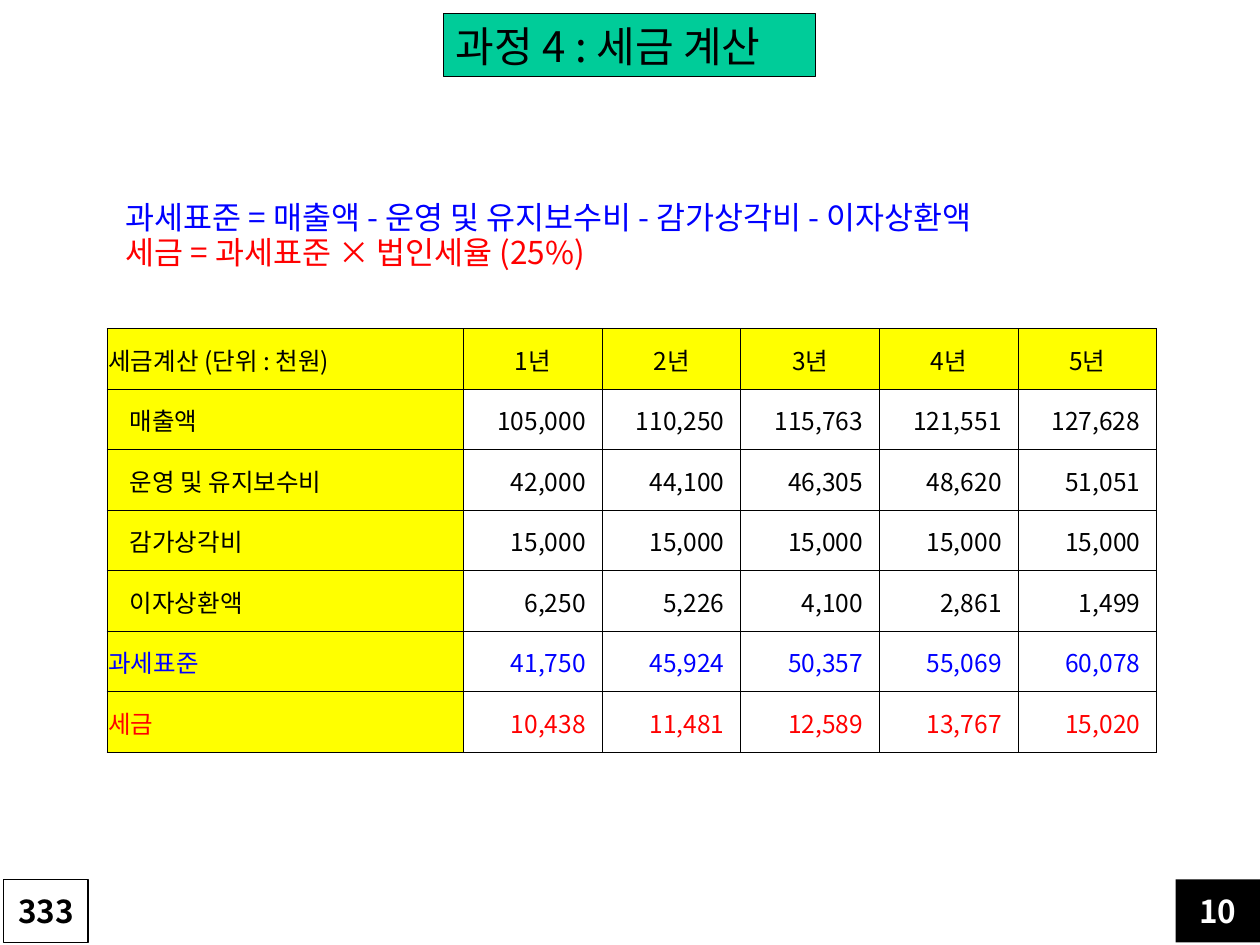
from lxml.etree import SubElement
from pptx import Presentation
from pptx.dml.color import RGBColor
from pptx.enum.shapes import MSO_SHAPE
from pptx.enum.text import MSO_ANCHOR, PP_ALIGN
from pptx.oxml.ns import qn
from pptx.util import Inches, Pt

FONT = "Noto Sans CJK KR"
BLACK, WHITE, BLUE, RED = "000000", "FFFFFF", "0000FF", "FF0000"
YELLOW, GREEN = "FFFF00", "00CC99"

FORMULAS = [
    ("과세표준 = 매출액 - 운영 및 유지보수비 - 감가상각비 - 이자상환액", BLUE),
    ("세금 = 과세표준 × 법인세율 (25%)", RED),
]
HEADER = ["세금계산 (단위 : 천원)", "1년", "2년", "3년", "4년", "5년"]
# Label, yearly values, text colour, label indent
ITEMS = [
    ("매출액", [105000, 110250, 115763, 121551, 127628], BLACK, 0.17),
    ("운영 및 유지보수비", [42000, 44100, 46305, 48620, 51051], BLACK, 0.17),
    ("감가상각비", [15000] * 5, BLACK, 0.17),
    ("이자상환액", [6250, 5226, 4100, 2861, 1499], BLACK, 0.17),
    ("과세표준", [41750, 45924, 50357, 55069, 60078], BLUE, 0),
    ("세금", [10438, 11481, 12589, 13767, 15020], RED, 0),
]
LABEL_WIDTH, YEAR_WIDTH, ROW_HEIGHT = 2.83, 1.1, 0.48
# Text, left, top, width, height, fill, line, text colour, size, bold, alignment
BOXES = [
    ("과정 4 : 세금 계산", 3.52, 0.11, 2.95, 0.5, GREEN, BLACK, BLACK, 24, False, PP_ALIGN.LEFT),
    ("10", 9.33, 6.98, 0.67, 0.5, BLACK, None, WHITE, 18, True, PP_ALIGN.CENTER),
    ("333", 0.03, 6.98, 0.67, 0.5, WHITE, BLACK, BLACK, 18, True, PP_ALIGN.CENTER),
]


def color(hex_code):
    return RGBColor.from_string(hex_code)


def write(para, text, size, hex_code, align=PP_ALIGN.LEFT, bold=False):
    para.text = text
    para.alignment = align
    font = para.font
    font.size, font.bold, font.name = Pt(size), bold, FONT
    font.color.rgb = color(hex_code)
    # Korean glyphs take the East Asian typeface
    SubElement(font._element, qn("a:ea"), typeface=FONT)


def add_borders(cell):
    properties = cell._tc.get_or_add_tcPr()
    for position, side in enumerate(("a:lnL", "a:lnR", "a:lnT", "a:lnB")):
        line = properties.makeelement(qn(side), {"w": str(Pt(0.5))})
        fill = SubElement(line, qn("a:solidFill"))
        SubElement(fill, qn("a:srgbClr"), val=BLACK)
        properties.insert(position, line)


def fill_cell(cell, text, fill, hex_code, align, left=0.01, right=0.01):
    cell.fill.solid()
    cell.fill.fore_color.rgb = color(fill)
    cell.vertical_anchor = MSO_ANCHOR.MIDDLE
    cell.margin_left, cell.margin_right = Inches(left), Inches(right)
    cell.margin_top, cell.margin_bottom = Inches(0.01), 0
    write(cell.text_frame.paragraphs[0], text, 14, hex_code, align)
    add_borders(cell)


def add_tax_table(page):
    row_count, column_count = len(ITEMS) + 1, len(HEADER)
    width = LABEL_WIDTH + YEAR_WIDTH * (column_count - 1)
    frame = page.shapes.add_table(row_count, column_count, Inches(0.85), Inches(2.61),
                                  Inches(width), Inches(ROW_HEIGHT * row_count))
    table = frame.table
    for index, column in enumerate(table.columns):
        column.width = Inches(YEAR_WIDTH if index else LABEL_WIDTH)
    for row in table.rows:
        row.height = Inches(ROW_HEIGHT)
    for index, text in enumerate(HEADER):
        align = PP_ALIGN.CENTER if index else PP_ALIGN.LEFT
        fill_cell(table.cell(0, index), text, YELLOW, BLACK, align)
    for row, (label, values, hex_code, indent) in enumerate(ITEMS, 1):
        fill_cell(table.cell(row, 0), label, YELLOW, hex_code, PP_ALIGN.LEFT, left=0.01 + indent)
        for index, value in enumerate(values, 1):
            fill_cell(table.cell(row, index), f"{value:,}", WHITE, hex_code,
                      PP_ALIGN.RIGHT, right=0.13)


def add_formulas(page):
    box = page.shapes.add_textbox(Inches(0.9), Inches(1.56), Inches(7.94), Inches(0.71))
    frame = box.text_frame
    for index, (text, hex_code) in enumerate(FORMULAS):
        para = frame.add_paragraph() if index else frame.paragraphs[0]
        write(para, text, 18, hex_code)
        para.line_spacing = 0.9


def add_box(page, text, left, top, width, height, fill, line, hex_code, size, bold, align):
    box = page.shapes.add_shape(MSO_SHAPE.RECTANGLE, Inches(left), Inches(top),
                                Inches(width), Inches(height))
    box.shadow.inherit = False
    box.fill.solid()
    box.fill.fore_color.rgb = color(fill)
    if line:
        box.line.color.rgb = color(line)
        box.line.width = Pt(0.75)
    else:
        box.line.fill.background()
    box.text_frame.word_wrap = True
    box.text_frame.vertical_anchor = MSO_ANCHOR.MIDDLE
    write(box.text_frame.paragraphs[0], text, size, hex_code, align, bold)


def main():
    deck = Presentation()
    deck.slide_width, deck.slide_height = Inches(10), Inches(7.5)
    page = deck.slides.add_slide(deck.slide_layouts[6])
    add_tax_table(page)
    add_formulas(page)
    for box in BOXES:
        add_box(page, *box)
    deck.save("out.pptx")


if __name__ == "__main__":
    main()
